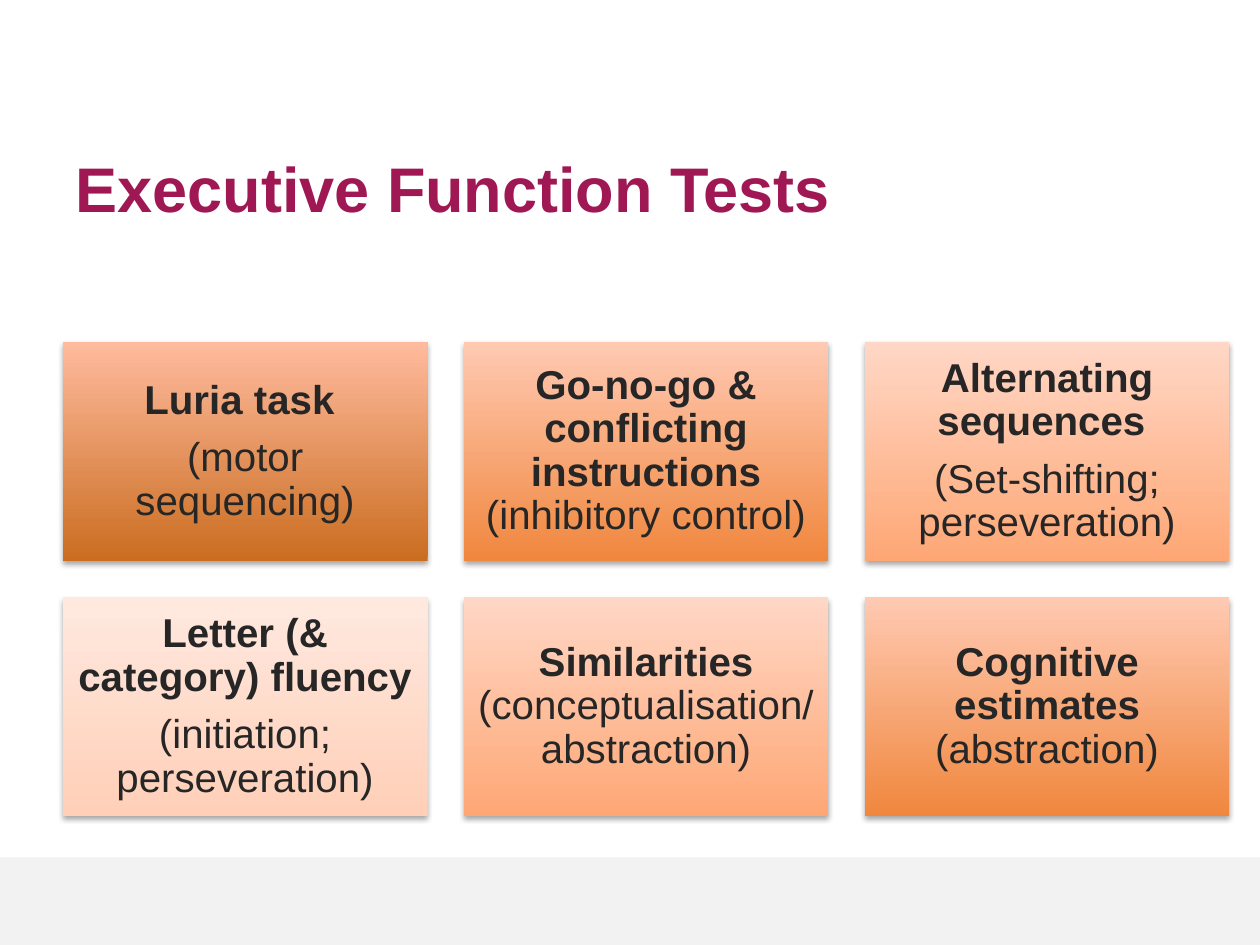
from dataclasses import dataclass

from lxml.etree import SubElement
from pptx import Presentation
from pptx.dml.color import RGBColor
from pptx.enum.shapes import MSO_SHAPE
from pptx.enum.text import MSO_ANCHOR, PP_ALIGN
from pptx.oxml.ns import qn
from pptx.util import Pt


@dataclass(frozen=True)
class Theme:
    font: str = "Arial"
    title: str = "A01853"
    ink: str = "262626"
    band: str = "F2F2F2"
    shade: str = "000000"
    head: int = 36
    body: int = 23


THEME = Theme()

# Gradients as (bottom, top)
RUST = ("CA6D20", "FFBB9E")
ORANGE = ("F0873E", "FFC9B2")
PEACH = ("FEA775", "FFD7C6")
CREAM = ("FFCFB8", "FFE9DF")

# Each test: gradient, name, skill tested, skill starts a new paragraph
TESTS = [
    (RUST, "Luria task ", "(motor sequencing)", True),
    (ORANGE, "Go-no-go & conflicting instructions ", "(inhibitory control)", False),
    (PEACH, "Alternating sequences ", "(Set-shifting; perseveration)", True),
    (CREAM, "Letter (& category) fluency ", "(initiation; perseveration)", True),
    (PEACH, "Similarities ", "(conceptualisation/ abstraction)", False),
    (ORANGE, "Cognitive estimates ", "(abstraction)", False),
]


def style(font, size, color):
    font.name = THEME.font
    font.size = Pt(size)
    font.color.rgb = RGBColor.from_string(color)


def add_box(slide, box):
    """Add a rectangle with no outline and no shadow."""
    shape = slide.shapes.add_shape(MSO_SHAPE.RECTANGLE, *map(Pt, box))
    shape.shadow.inherit = False
    shape.line.fill.background()
    return shape


def add_band(slide, box):
    fill = add_box(slide, box).fill
    fill.solid()
    fill.fore_color.rgb = RGBColor.from_string(THEME.band)


def add_title(slide, box, text):
    title = slide.shapes.title
    title.left, title.top, title.width, title.height = map(Pt, box)
    frame = title.text_frame
    frame.text = text
    frame.vertical_anchor = MSO_ANCHOR.MIDDLE
    para = frame.paragraphs[0]
    para.alignment = PP_ALIGN.LEFT
    style(para.font, THEME.head, THEME.title)
    para.font.bold = True


def add_shade(shape):
    """Give the shape a soft shadow below it."""
    effects = shape._element.spPr.find(qn("a:effectLst"))
    outer = SubElement(effects, qn("a:outerShdw"), blurRad=str(Pt(3.1)),
                       dist=str(Pt(1.8)), dir="5400000", rotWithShape="0")
    color = SubElement(outer, qn("a:srgbClr"), val=THEME.shade)
    SubElement(color, qn("a:alpha"), val="35000")


def add_card(slide, box, colors, name, skill, split):
    card = add_box(slide, box)
    card.fill.gradient()
    card.fill.gradient_angle = 90
    for stop, color in zip(card.fill.gradient_stops, colors):
        stop.color.rgb = RGBColor.from_string(color)
    add_shade(card)

    frame = card.text_frame
    frame.word_wrap = True
    frame.vertical_anchor = MSO_ANCHOR.MIDDLE
    frame.margin_left = frame.margin_right = Pt(7)
    frame.margin_top = frame.margin_bottom = Pt(7)
    first = frame.paragraphs[0]
    last = frame.add_paragraph() if split else first
    for para, text, bold in ((first, name, True), (last, skill, False)):
        run = para.add_run()
        run.text = text
        run.font.bold = bold
    for para in frame.paragraphs:
        para.alignment = PP_ALIGN.CENTER
        para.line_spacing = 0.9
        para.space_after = Pt(8)
        style(para.font, THEME.body, THEME.ink)


def add_grid(slide, box, tests, cols=3, gap=20.8):
    left, top, width, height = box
    rows = len(tests) // cols
    wide = (width - gap * (cols - 1)) / cols
    high = (height - gap * (rows - 1)) / rows
    for i, test in enumerate(tests):
        row, col = divmod(i, cols)
        place = (left + col * (wide + gap), top + row * (high + gap), wide, high)
        add_card(slide, place, *test)


def main():
    deck = Presentation()
    deck.slide_width, deck.slide_height = Pt(720), Pt(540)
    slide = deck.slides.add_slide(deck.slide_layouts[5])
    add_band(slide, (0, 490, 720, 50))
    add_grid(slide, (36, 195.6, 666.6, 270.8), TESTS)
    add_title(slide, (36, 80.6, 617, 53.3), "Executive Function Tests")
    deck.save("out.pptx")


if __name__ == "__main__":
    main()
